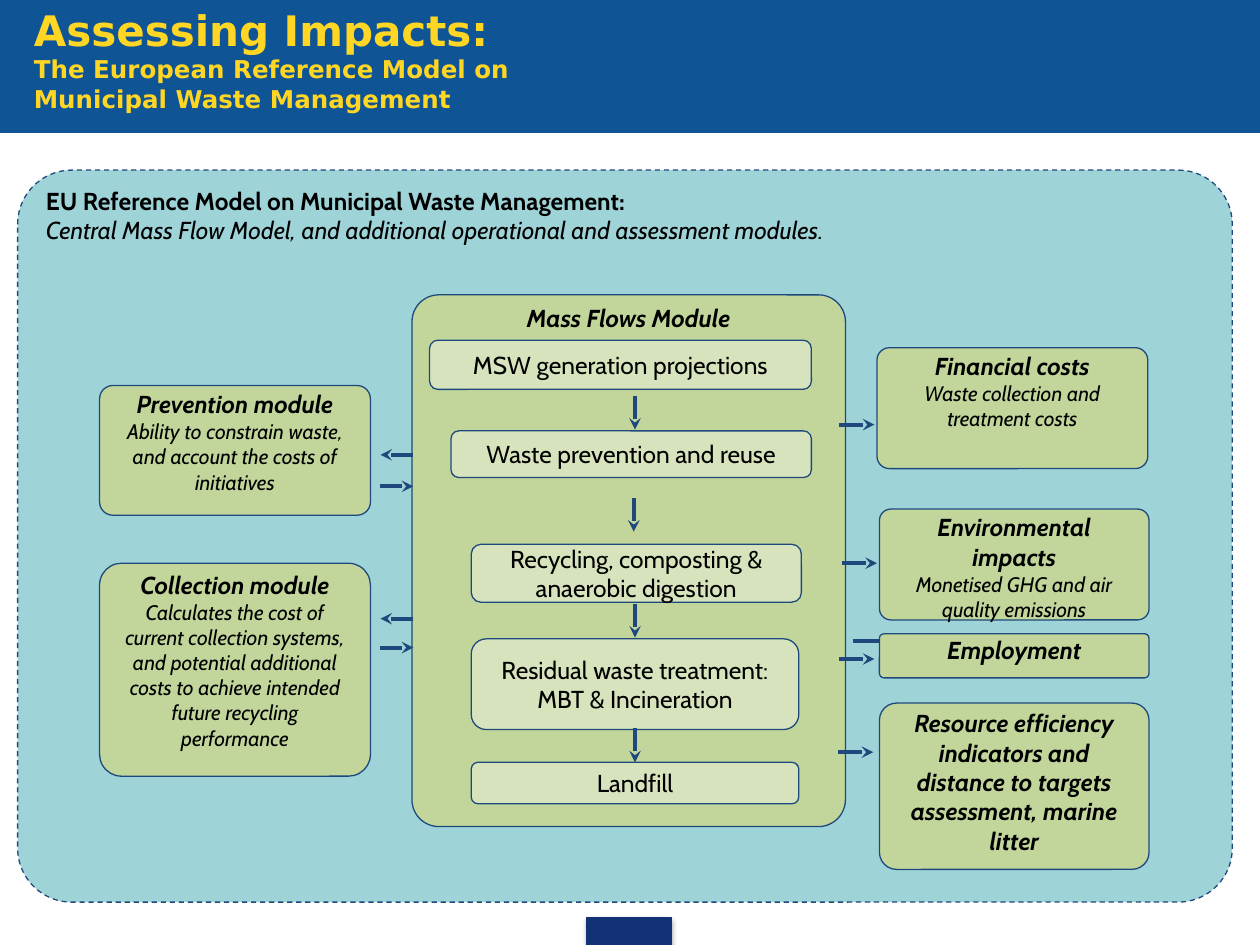
import pptx
import pptx.util
import pptx.dml.color
import pptx.enum.dml
import pptx.enum.shapes
import pptx.enum.text
import pptx.oxml
import pptx.oxml.ns

Inches = pptx.util.Inches
Pt = pptx.util.Pt
RGBColor = pptx.dml.color.RGBColor
Shape = pptx.enum.shapes.MSO_SHAPE
Align = pptx.enum.text.PP_ALIGN
Anchor = pptx.enum.text.MSO_ANCHOR

BANNER = RGBColor(0x0F, 0x54, 0x94)
FOOTER = RGBColor(0x13, 0x31, 0x76)
YELLOW = RGBColor(0xFF, 0xD6, 0x24)
NAVY = RGBColor(0x1F, 0x49, 0x7D)
TEAL = RGBColor(0x9E, 0xD3, 0xD7)
GREEN = RGBColor(0xC2, 0xD6, 0x9B)
PALE = RGBColor(0xD6, 0xE3, 0xBC)
BLACK = RGBColor(0, 0, 0)

TITLE = ["Assessing Impacts:", "The European Reference Model on Municipal Waste Management"]
OVERVIEW = [
    "EU Reference Model on Municipal Waste Management:",
    "Central Mass Flow Model, and additional operational and assessment modules.",
]
MASS_FLOWS = "Mass Flows Module"

FLOW_STEPS = [
    ("MSW generation projections", (3.41, 2.7, 3.03, 0.39), 0.1),
    ("Waste prevention and reuse", (3.58, 3.42, 2.86, 0.37), 0),
    ("Recycling, composting & anaerobic digestion", (3.74, 4.32, 2.62, 0.46), 0.1),
    ("Residual waste treatment: MBT & Incineration", (3.74, 5.07, 2.6, 0.72), 0.04),
    ("Landfill", (3.74, 6.05, 2.6, 0.33), 0.1),
]
MODULES = [
    ("Prevention module",
     "Ability to constrain waste, and account the costs of initiatives",
     (0.79, 3.06, 2.15, 1.03)),
    ("Collection module",
     "Calculates the cost of current collection systems, and potential additional "
     "costs to achieve intended future recycling performance",
     (0.79, 4.47, 2.15, 1.69)),
    ("Financial costs", "Waste collection and treatment costs", (6.96, 2.76, 2.15, 0.96)),
    ("Environmental impacts", "Monetised GHG and air quality emissions",
     (6.98, 4.04, 2.14, 0.88)),
    ("Employment", "", (6.98, 5.03, 2.14, 0.35)),
    ("Resource efficiency indicators and distance to targets assessment, marine litter", "",
     (6.98, 5.58, 2.14, 1.32)),
]
FLOW_ARROWS = [(5.04, 3.14), (5.03, 3.95), (5.04, 4.79), (5.04, 5.78)]
TO_MODULES = [3.61, 4.91]
FROM_MODULES = [3.86, 5.14]
TO_IMPACTS = [(6.66, 3.37), (6.68, 4.47), (6.66, 5.23), (6.65, 5.97)]
HIDDEN_TIP_ARROW = (6.77, 5.09, 7.08, 5.09)

prs = pptx.Presentation()
prs.slide_width, prs.slide_height = Inches(10), Inches(7.5)
slide = prs.slides.add_slide(prs.slide_layouts[6])


def add_box(kind, place, fill, line, corner=None):
    box = slide.shapes.add_shape(kind, *map(Inches, place))
    box.shadow.inherit = False
    box.fill.solid()
    box.fill.fore_color.rgb = fill
    box.line.color.rgb = line
    box.line.width = Pt(0.75)
    if corner is not None:
        box.adjustments[0] = corner
    return box


def set_frame(box, anchor, side, edge=0):
    frame = box.text_frame
    frame.word_wrap = True
    frame.vertical_anchor = anchor
    frame.margin_left = frame.margin_right = Inches(side)
    frame.margin_top = frame.margin_bottom = Inches(edge)
    return frame


def add_run(paragraph, text, size, bold=False, italic=False, color=BLACK, face="Cabin"):
    run = paragraph.add_run()
    run.text = text
    font = run.font
    font.name, font.size, font.bold, font.italic = face, Pt(size), bold, italic
    font.color.rgb = color


def add_arrow(x1, y1, x2, y2):
    arrow = slide.shapes.add_connector(
        pptx.enum.shapes.MSO_CONNECTOR.STRAIGHT, *map(Inches, (x1, y1, x2, y2)))
    arrow.line.color.rgb = NAVY
    arrow.line.width = Pt(2.25)
    tip = pptx.oxml.ns.qn("a:tailEnd")
    arrow.line._get_or_add_ln().append(arrow._element.makeelement(tip, {"type": "stealth"}))
    properties = arrow._element.spPr
    properties.append(properties.makeelement(pptx.oxml.ns.qn("a:effectLst"), {}))


add_box(Shape.RECTANGLE, (0, 0, 10, 1.05), BANNER, BANNER)
footer_tab = add_box(Shape.RECTANGLE, (4.66, 7.28, 0.67, 0.22), FOOTER, FOOTER)
footer_tab._element.spPr.find(pptx.oxml.ns.qn("a:effectLst")).append(pptx.oxml.parse_xml(
    '<a:outerShdw xmlns:a="http://schemas.openxmlformats.org/drawingml/2006/main" '
    'blurRad="39370" dist="22860" dir="5400000" rotWithShape="0">'
    '<a:srgbClr val="000000"><a:alpha val="35000"/></a:srgbClr></a:outerShdw>'))

title = slide.shapes.add_textbox(*map(Inches, (0.17, 0.17, 4.12, 0.59)))
heading = set_frame(title, Anchor.MIDDLE, 0.1, 0.05).paragraphs[0]
add_run(heading, TITLE[0], 24, True, color=YELLOW, face="DejaVu Sans")
heading.add_line_break()
add_run(heading, TITLE[1], 14, True, color=YELLOW, face="DejaVu Sans")

overview = add_box(Shape.ROUNDED_RECTANGLE, (0.14, 1.35, 9.64, 5.81), TEAL, NAVY, 0.074)
overview.line.dash_style = pptx.enum.dml.MSO_LINE.DASH
summary = set_frame(overview, Anchor.TOP, 0.1).paragraphs[0]
summary.alignment = Align.LEFT
add_run(summary, OVERVIEW[0], 14, bold=True)
summary.add_line_break()
add_run(summary, OVERVIEW[1], 14, italic=True)

mass_flows = add_box(Shape.ROUNDED_RECTANGLE, (3.27, 2.34, 3.44, 4.22), GREEN, NAVY, 0.062)
mass_label = set_frame(mass_flows, Anchor.TOP, 0.1).paragraphs[0]
mass_label.alignment = Align.CENTER
add_run(mass_label, MASS_FLOWS, 14, True, True)

add_arrow(*HIDDEN_TIP_ARROW)

for step, place, side in FLOW_STEPS:
    box = add_box(Shape.ROUNDED_RECTANGLE, place, PALE, NAVY, 0.167)
    label = set_frame(box, Anchor.MIDDLE, side).paragraphs[0]
    label.alignment = Align.CENTER
    add_run(label, step, 14)

for name, detail, place in MODULES:
    box = add_box(Shape.ROUNDED_RECTANGLE, place, GREEN, NAVY, 0.103)
    frame = set_frame(box, Anchor.TOP, 0.1)
    frame.paragraphs[0].alignment = Align.CENTER
    add_run(frame.paragraphs[0], name, 14, True, True)
    if detail:
        description = frame.add_paragraph()
        description.alignment = Align.CENTER
        add_run(description, detail, 12, italic=True)

for x, y in FLOW_ARROWS:
    add_arrow(x, y, x, y + 0.27)
for y in TO_MODULES:
    add_arrow(3.28, y, 3.02, y)
for y in FROM_MODULES:
    add_arrow(3.02, y, 3.28, y)
for x, y in TO_IMPACTS:
    add_arrow(x, y, x + 0.28, y)

prs.save("out.pptx")
